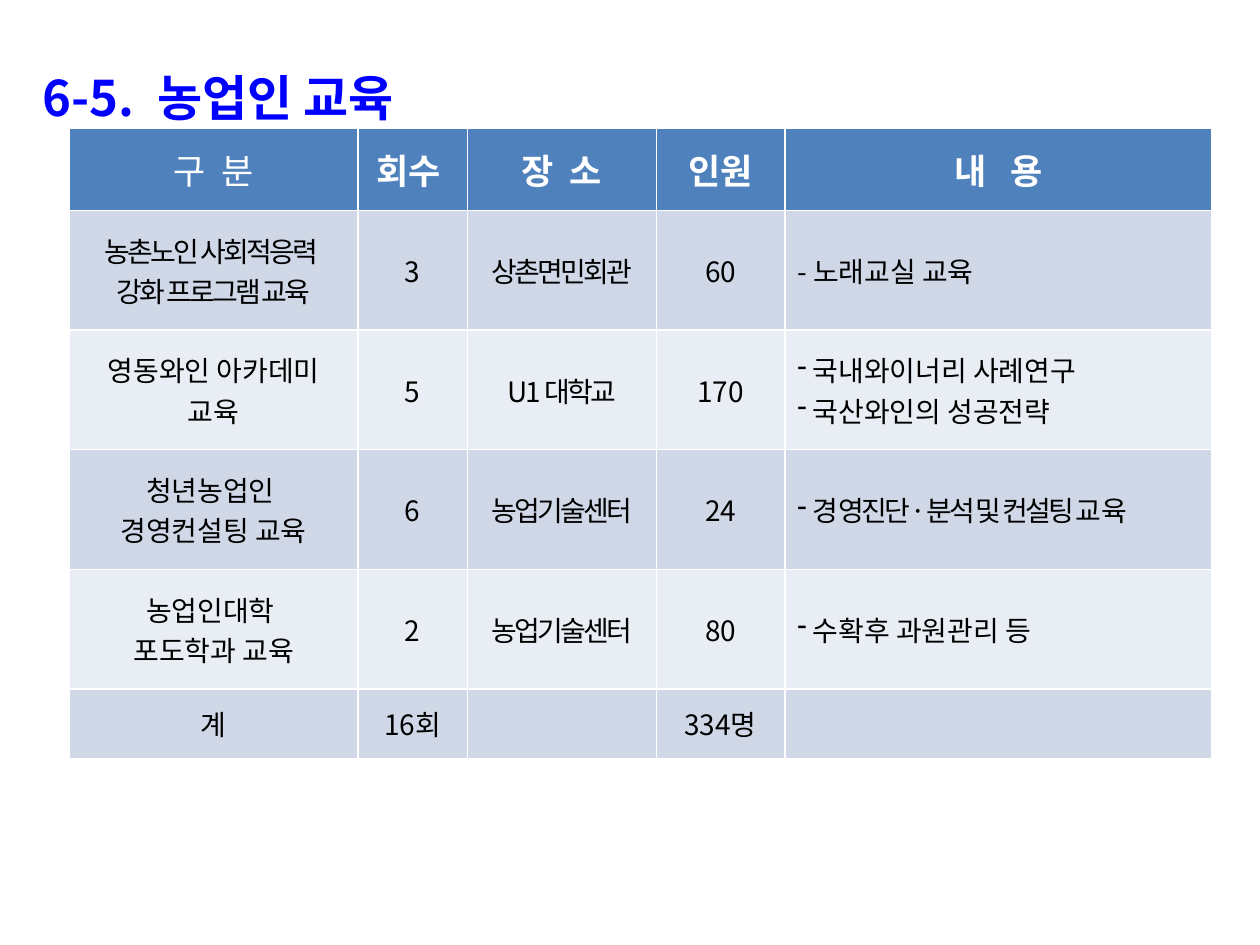
"""Build a slide with a table of farmer training courses."""
from dataclasses import dataclass

from lxml import etree
from pptx import Presentation, util as u
from pptx.dml.color import RGBColor
from pptx.enum import text
from pptx.oxml import ns


@dataclass(frozen=True)
class Theme:
    font: str = "Noto Sans CJK KR"
    title: str = "0000FF"
    header_text: str = "FFFFFF"
    body_text: str = "000000"
    header_fill: str = "4F81BD"
    bands: tuple = ("D0D8E8", "E9EDF4")
    title_size: int = 28
    header_size: int = 20
    body_size: int = 16


theme = Theme()
TIGHT = -1.5


def add_spans(para, parts, size, color, bold=False):
    for part in parts:
        words, spacing = part if isinstance(part, tuple) else (part, 0)
        span = para.add_run()
        span.text = words
        span.font.size = u.Pt(size)
        span.font.bold = bold
        span.font.name = theme.font
        span.font.color.rgb = RGBColor.from_string(color)
        props = span.font._element
        etree.SubElement(props, ns.qn("a:ea")).set("typeface", theme.font)
        if spacing:
            props.set("spc", str(round(spacing * 100)))


def set_indent(para, left, first, bullet=None):
    props = para._p.get_or_add_pPr()
    props.set("marL", str(u.Pt(left)))
    props.set("indent", str(u.Pt(first)))
    if bullet:
        etree.SubElement(props, ns.qn("a:buChar")).set("char", bullet)


deck = Presentation()
deck.slide_width, deck.slide_height = u.Pt(720), u.Pt(540)
page = deck.slides.add_slide(deck.slide_layouts[6])

box = page.shapes.add_textbox(u.Pt(17.3), u.Pt(28.1), u.Pt(680.4), u.Pt(46.8))
box.text_frame.word_wrap = True
para = box.text_frame.paragraphs[0]
para.line_spacing = 1.2
set_indent(para, 41.8, -41.8)
add_spans(para, ["6-5.", (" ", 7), "농업인 교육"], theme.title_size, theme.title, True)

headers = [
    ["구", (" ", 4.5), "분"],
    ["회수 "],
    ["장", (" ", 4.5), "소"],
    ["인원"],
    ["내", (" ", 9), "용"],
]
courses = [
    ([[("농촌노인 사회적응력 ", TIGHT)], [("강화 프로그램 교육", TIGHT)]],
     "3", "상촌면민회관", "60", [["- 노래교실 교육"]]),
    ([["영동와인 아카데미 교육"]],
     "5", "U1 대학교", "170", [[" 국내와이너리 사례연구"], [" 국산와인의 성공전략"]]),
    ([["청년농업인 "], ["경영컨설팅 교육"]],
     "6", "농업기술센터", "24", [[" 경", ("영진단·분석 및 컨설팅 교", TIGHT), "육"]]),
    ([["농업인대학 "], ["포도학과 교육"]],
     "2", "농업기술센터", "80", [[" 수확후 과원관리 등"]]),
    ([["계"]], "16회", "", "334명", []),
]
rows = [[[header] for header in headers]]
for name, count, place, people, content in courses:
    venue = [[(place, TIGHT)]] if place else []
    rows.append([name, [[count]], venue, [[people]], content])

widths = [164.9, 62.6, 108, 73.4, 244.1]
heights = [46.8] + [68.4] * 4 + [39.6]
table = page.shapes.add_table(
    len(heights), len(widths), u.Pt(39.6), u.Pt(73.4), u.Pt(sum(widths)), u.Pt(sum(heights))
).table
for column, width in zip(table.columns, widths):
    column.width = u.Pt(width)
for row, height in zip(table.rows, heights):
    row.height = u.Pt(height)

for r, row in enumerate(rows):
    is_header = r == 0
    size = theme.header_size if is_header else theme.body_size
    color = theme.header_text if is_header else theme.body_text
    fill = theme.header_fill if is_header else theme.bands[(r - 1) % 2]
    for c, lines in enumerate(row):
        cell = table.cell(r, c)
        cell.fill.solid()
        cell.fill.fore_color.rgb = RGBColor.from_string(fill)
        cell.vertical_anchor = text.MSO_ANCHOR.MIDDLE
        for i, parts in enumerate(lines):
            frame = cell.text_frame
            para = frame.add_paragraph() if i else frame.paragraphs[0]
            if is_header or c < len(widths) - 1:
                para.alignment = text.PP_ALIGN.CENTER
            elif parts[0].startswith("-"):
                set_indent(para, 27.4, -27.4)
            else:
                set_indent(para, 0, 0, "-")
            add_spans(para, parts, size, color, is_header and c > 0)

deck.save("out.pptx")
